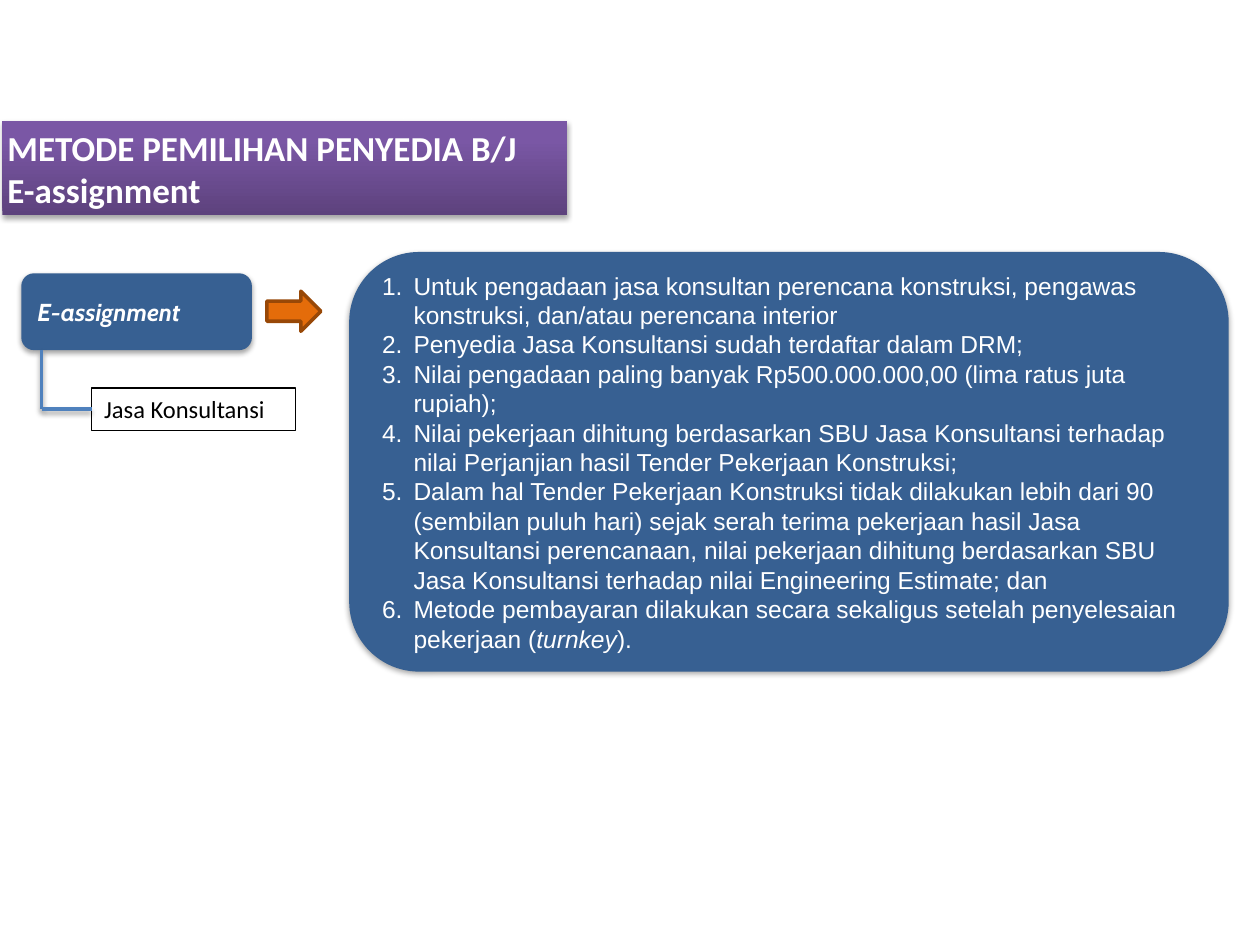
import copy

import pptx
import pptx.dml.color
import pptx.enum.shapes
import pptx.enum.text
import pptx.oxml
import pptx.oxml.ns
import pptx.util
from pptx.util import Cm

SHAPES = pptx.enum.shapes.MSO_SHAPE
ANCHORS = pptx.enum.text.MSO_ANCHOR
NAMESPACE = pptx.oxml.ns.nsdecls("a")
BLUE = "376092"
WHITE = "FFFFFF"
REQUIREMENTS = [
    ["Untuk pengadaan jasa konsultan perencana konstruksi, pengawas konstruksi, dan/atau perencana interior"],
    ["Penyedia Jasa Konsultansi sudah terdaftar dalam DRM;"],
    ["Nilai pengadaan paling banyak Rp500.000.000,00 (lima ratus juta rupiah);"],
    ["Nilai pekerjaan dihitung berdasarkan SBU Jasa Konsultansi terhadap nilai Perjanjian hasil Tender "
     "Pekerjaan Konstruksi;"],
    ["Dalam hal Tender Pekerjaan Konstruksi tidak dilakukan lebih dari 90 (sembilan puluh hari) sejak serah "
     "terima pekerjaan hasil Jasa Konsultansi perencanaan, nilai pekerjaan dihitung berdasarkan SBU Jasa "
     "Konsultansi terhadap nilai Engineering Estimate; dan"],
    ["Metode pembayaran dilakukan secara sekaligus setelah penyelesaian pekerjaan (", "turnkey", ")."],
]


def paint(color_format, color):
    color_format.rgb = pptx.dml.color.RGBColor.from_string(color)


def add_shadow(shape, opacity):
    properties = shape._element.spPr
    for effects in properties.findall(pptx.oxml.ns.qn("a:effectLst")):
        properties.remove(effects)
    properties.append(pptx.oxml.parse_xml(
        f'<a:effectLst {NAMESPACE}><a:outerShdw blurRad="{pptx.util.Pt(3.1)}" dist="{pptx.util.Pt(1.7)}" '
        f'dir="5400000" rotWithShape="0"><a:srgbClr val="000000"><a:alpha val="{opacity}000"/>'
        '</a:srgbClr></a:outerShdw></a:effectLst>'))


def add_box(slide, kind, box, fill=None, line=None, line_width=0.75):
    shape = slide.shapes.add_shape(kind, *(Cm(length) for length in box))
    shape.shadow.inherit = False
    if fill:
        shape.fill.solid()
        paint(shape.fill.fore_color, fill)
    else:
        shape.fill.background()
    if line:
        paint(shape.line.color, line)
        shape.line.width = pptx.util.Pt(line_width)
    else:
        shape.line.fill.background()
    return shape


def write(shape, paragraphs, font_name, size, color, bold=False, anchor=ANCHORS.MIDDLE):
    frame = shape.text_frame
    frame.word_wrap = True
    frame.vertical_anchor = anchor
    frame.text = "\n".join(paragraphs)
    for paragraph in frame.paragraphs:
        paragraph.alignment = pptx.enum.text.PP_ALIGN.LEFT
        for run in paragraph.runs:
            style_run(run, font_name, size, color, bold)
    return frame


def style_run(run, font_name, size, color, bold=False, italic=False):
    run.font.name = font_name
    run.font.size = pptx.util.Pt(size)
    run.font.bold = bold
    run.font.italic = italic
    paint(run.font.color, color)


def add_title(slide, box):
    banner = add_box(slide, SHAPES.RECTANGLE, box)
    banner.fill.gradient()
    banner.fill.gradient_angle = 90
    stop_list = banner._element.spPr.find(".//" + pptx.oxml.ns.qn("a:gsLst"))
    stop_list.append(copy.deepcopy(stop_list[-1]))
    stops = [(0, "5D427D"), (0.8, "7A57A5"), (1, "7A56A7")]
    for stop, (position, color) in zip(banner.fill.gradient_stops, stops):
        stop.position = position
        paint(stop.color, color)
    add_shadow(banner, 35)
    frame = write(banner, ["METODE PEMILIHAN PENYEDIA B/J", "E-assignment"], "Calibri", 20, WHITE, bold=True)
    frame.margin_left = frame.margin_right = Cm(0.1)


def add_branch_line(slide, start, end):
    connector = slide.shapes.add_connector(
        pptx.enum.shapes.MSO_CONNECTOR.STRAIGHT, *(Cm(length) for length in start + end))
    paint(connector.line.color, "4F81BD")
    connector.line.width = pptx.util.Pt(2)
    add_shadow(connector, 38)
    return connector


def add_method(slide, box):
    left, top, width, height = box
    method = add_box(slide, SHAPES.ROUNDED_RECTANGLE, (left, top, 4.65, 1.55), BLUE)
    add_shadow(method, 35)
    frame = write(method, ["E-assignment"], "Cabin", 14, WHITE, bold=True)
    frame.paragraphs[0].runs[0].font.italic = True

    add_box(slide, SHAPES.RIGHT_ARROW, (left + width - 1.09, top + 0.36, 1.09, 0.81), "E46C0A", "984807", 2)

    service_left, service_height = left + 1.42, 0.86
    service = add_box(
        slide, SHAPES.RECTANGLE, (service_left, top + height - service_height, 4.11, service_height), line="000000")
    write(service, ["Jasa Konsultansi"], "Calibri", 14, "000000", anchor=ANCHORS.TOP)

    trunk, middle = left + 0.41, top + height - service_height / 2
    add_branch_line(slide, (trunk, top + 1.55), (trunk, middle))
    branch = add_branch_line(slide, (trunk, middle), (service_left, middle))
    branch.end_connect(service, 1)


def add_requirements(slide, box):
    panel = add_box(slide, SHAPES.ROUNDED_RECTANGLE, box, BLUE)
    add_shadow(panel, 35)
    frame = write(panel, [""] * len(REQUIREMENTS), "Arial", 14, WHITE)
    for paragraph, texts in zip(frame.paragraphs, REQUIREMENTS):
        properties = paragraph._p.get_or_add_pPr()
        indent = pptx.util.Pt(18)
        properties.set("marL", str(indent))
        properties.set("indent", str(-indent))
        for bullet in (f'<a:buClr {NAMESPACE}><a:srgbClr val="{WHITE}"/></a:buClr>',
                       f'<a:buFont {NAMESPACE} typeface="Arial"/>',
                       f'<a:buAutoNum {NAMESPACE} type="arabicPeriod"/>'):
            properties.append(pptx.oxml.parse_xml(bullet))
        for text in texts:
            run = paragraph.add_run()
            run.text = text
            style_run(run, "Arial", 14, WHITE, italic=text == "turnkey")


def main():
    presentation = pptx.Presentation()
    presentation.slide_width = Cm(25.4)
    presentation.slide_height = Cm(19.05)
    slide = presentation.slides.add_slide(presentation.slide_layouts[6])
    add_title(slide, (0.05, 2.44, 11.38, 1.9))
    add_method(slide, (0.43, 5.51, 6.04, 3.17))
    add_requirements(slide, (7.04, 5.08, 17.73, 8.46))
    presentation.save("out.pptx")


if __name__ == "__main__":
    main()
